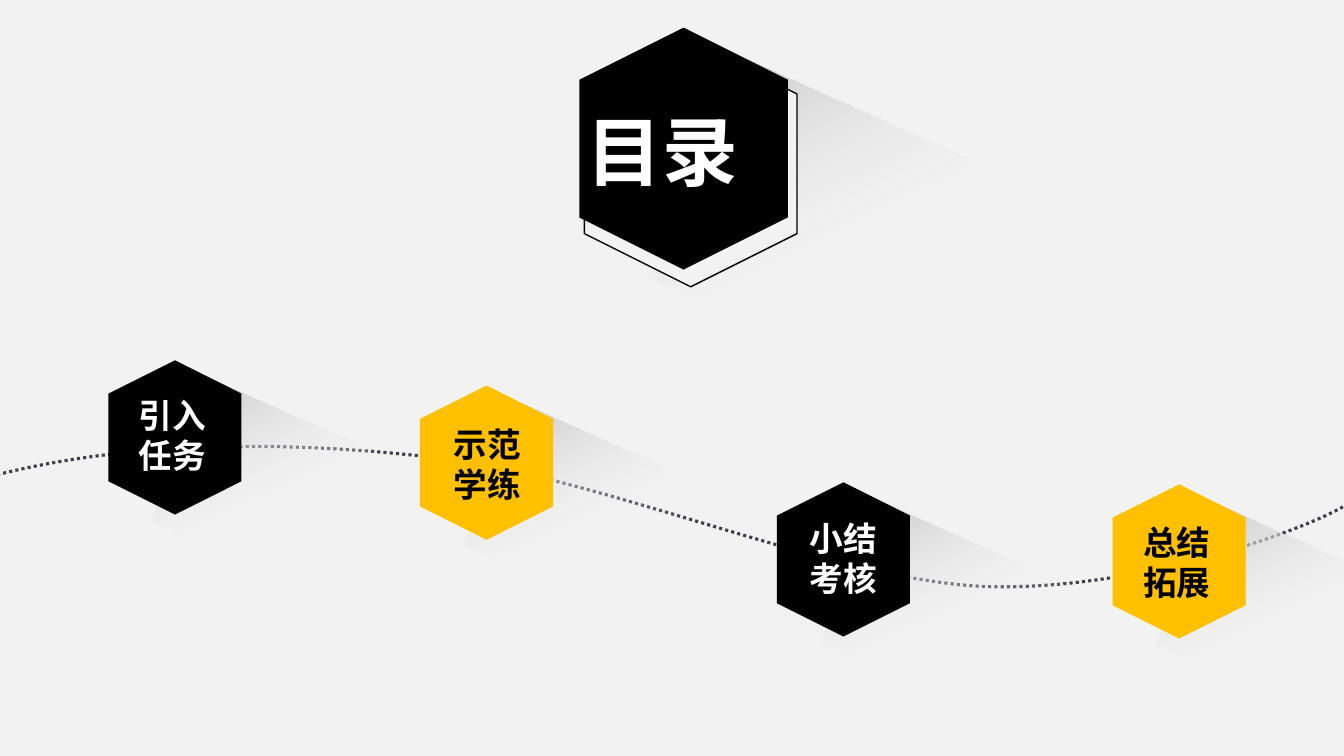
from dataclasses import dataclass
from lxml.etree import SubElement
from pptx import Presentation
from pptx.dml.color import RGBColor
from pptx.enum.dml import MSO_LINE
from pptx.enum.shapes import MSO_SHAPE
from pptx.enum.text import MSO_ANCHOR, MSO_AUTO_SIZE, PP_ALIGN
from pptx.oxml import parse_xml
from pptx.oxml.ns import nsdecls, qn
from pptx.util import Inches, Pt


@dataclass(frozen=True)
class Theme:
    background: str = "F2F2F2"
    dark: str = "000000"
    light: str = "FFFFFF"
    accent: str = "FFC000"
    path_line: str = "3F404B"
    shade_stops: tuple = ((0, "85A3D9", 54), (0, "BFBFBF", 100), (54, "FFFFFF", 0))
    font: str = "Noto Sans CJK SC"
    title_size: int = 54
    label_size: int = 24
    line_height: float = 1.19


THEME = Theme()
TITLE = "目录"
TITLE_BOX = (5.72, 0.92, 2.1, 1.01)
TITLE_SHADE = (6.72, 1.41, 4.51, 2.39)
TITLE_OUTLINE = (5.63, 0.57, 2.44, 2.11)
TITLE_HEXAGON = (5.58, 0.44, 2.4, 2.07)

NODES = [
    (["示范", "学练"], (4.06, 3.93), (4.4, 4.12), THEME.accent, THEME.dark),
    (["总结拓展"], (10.93, 4.91), (11.24, 5.09), THEME.accent, THEME.dark),
    (["引入", "任务"], (0.97, 3.68), (1.28, 3.83), THEME.dark, THEME.light),
    (["小结", "考核"], (7.6, 4.89), (7.93, 5.06), THEME.dark, THEME.light),
]
NODE_SIZE = (1.53, 1.32)
LABEL_SIZE = (0.91, 0.91)
SHADE_OFFSET = (0.72, 0.62)
SHADE_SIZE = (2.87, 1.52)
SHADE_ANGLE = 24.2

PATH_START = (-0.03, 4.71)
PATH_CURVES = [
    ((1.21, 4.4), (2.68, 4.35), (4.32, 4.54)),
    ((5.95, 4.72), (8.28, 5.77), (9.8, 5.82)),
    ((11.33, 5.86), (12.98, 5.24), (13.35, 5.01)),
]


def inches(values):
    return [Inches(value) for value in values]


def add_rotated(shapes, kind, box, rotation):
    shape = shapes.add_shape(kind, *inches(box))
    shape.rotation = rotation
    shape.shadow.inherit = False
    shape.line.fill.background()
    return shape


def add_hexagon(shapes, box, fill, outline=None):
    hexagon = add_rotated(shapes, MSO_SHAPE.HEXAGON, box, 90)
    hexagon.fill.solid()
    hexagon.fill.fore_color.rgb = RGBColor.from_string(fill)
    if outline:
        hexagon.line.color.rgb = RGBColor.from_string(outline)
        hexagon.line.width = Pt(1)


def add_shade(shapes, box):
    shade = add_rotated(shapes, MSO_SHAPE.RECTANGLE, box, SHADE_ANGLE)
    shade.fill.gradient()
    stops = "".join(
        f'<a:gs pos="{position * 1000}"><a:srgbClr val="{color}">'
        f'<a:alpha val="{opacity * 1000}"/></a:srgbClr></a:gs>'
        for position, color, opacity in THEME.shade_stops
    )
    gradient = parse_xml(
        f'<a:gradFill {nsdecls("a")} rotWithShape="1"><a:gsLst>{stops}</a:gsLst>'
        f'<a:lin ang="{40 * 60000}" scaled="0"/></a:gradFill>'
    )
    properties = shade._element.spPr
    properties.replace(properties.find(qn("a:gradFill")), gradient)


def write_text(shape, lines, *, size, color, align=PP_ALIGN.LEFT):
    frame = shape.text_frame
    frame.word_wrap = True
    frame.auto_size = MSO_AUTO_SIZE.SHAPE_TO_FIT_TEXT
    frame.vertical_anchor = MSO_ANCHOR.TOP
    frame.margin_left = frame.margin_right = Inches(0.1)
    frame.margin_top = Inches(0.05 + size * 0.0015)
    frame.margin_bottom = 0
    for index, line in enumerate(lines):
        paragraph = frame.add_paragraph() if index else frame.paragraphs[0]
        paragraph.alignment = align
        paragraph.line_spacing = Pt(size * THEME.line_height)
        paragraph.space_before = Pt(0)
        run = paragraph.add_run()
        run.text = line
        run.font.size = Pt(size)
        run.font.bold = True
        run.font.color.rgb = RGBColor.from_string(color)
        run.font.name = THEME.font
        SubElement(run._r.get_or_add_rPr(), qn("a:ea"), typeface=THEME.font)


def add_path(shapes):
    builder = shapes.build_freeform(*inches(PATH_START), scale=1.0)
    points = [inches(point) for curve in PATH_CURVES for point in curve]
    builder.add_line_segments(points, close=False)
    path = builder.convert_to_shape()
    path.shadow.inherit = False
    path.fill.background()
    path.line.color.rgb = RGBColor.from_string(THEME.path_line)
    path.line.width = Pt(2.25)
    path.line.dash_style = MSO_LINE.ROUND_DOT
    outline = path._element.find(".//" + qn("a:path"))
    segments = outline.findall(qn("a:lnTo"))
    for start in range(0, len(segments), 3):
        curve = SubElement(outline, qn("a:cubicBezTo"))
        for segment in segments[start:start + 3]:
            curve.append(segment[0])
            outline.remove(segment)


def add_node(shapes, lines, corner, label_corner, fill, color):
    group = shapes.add_group_shape().shapes
    shade_corner = tuple(a + b for a, b in zip(corner, SHADE_OFFSET))
    add_shade(group, shade_corner + SHADE_SIZE)
    add_hexagon(group, corner + NODE_SIZE, fill)
    label = group.add_textbox(*inches(label_corner + LABEL_SIZE))
    write_text(label, lines, size=THEME.label_size, color=color)


def main():
    presentation = Presentation()
    presentation.slide_width, presentation.slide_height = inches((13.33, 7.5))
    slide = presentation.slides.add_slide(presentation.slide_layouts[5])
    slide.background.fill.solid()
    slide.background.fill.fore_color.rgb = RGBColor.from_string(THEME.background)
    shapes = slide.shapes

    add_shade(shapes, TITLE_SHADE)
    add_path(shapes)
    add_hexagon(shapes, TITLE_OUTLINE, THEME.background, outline=THEME.dark)
    add_hexagon(shapes, TITLE_HEXAGON, THEME.dark)
    title = shapes.title
    title.left, title.top, title.width, title.height = inches(TITLE_BOX)
    write_text(title, [TITLE], size=THEME.title_size, color=THEME.light,
               align=PP_ALIGN.JUSTIFY)
    shapes._spTree.append(title._element)

    for node in NODES:
        add_node(shapes, *node)
    presentation.save("out.pptx")


if __name__ == "__main__":
    main()
